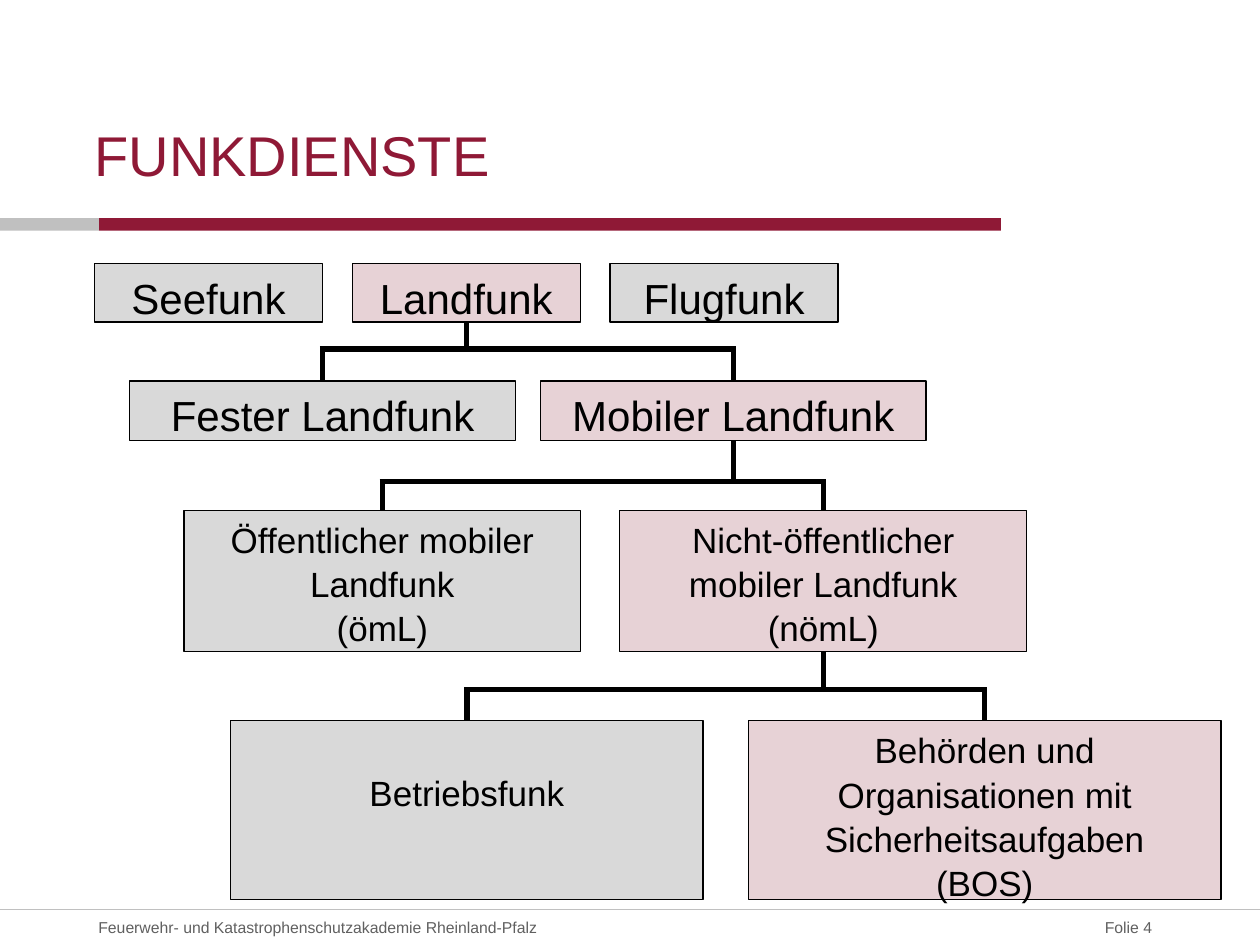
"""Build the slide on radio services as a four-level tree."""
import pptx
import pptx.util
import pptx.dml.color
import pptx.enum.shapes
import pptx.enum.text
from lxml import etree

Pt = pptx.util.Pt
RGB = pptx.dml.color.RGBColor.from_string
ALIGN = pptx.enum.text.PP_ALIGN
ANCHOR = pptx.enum.text.MSO_ANCHOR
RECTANGLE = pptx.enum.shapes.MSO_SHAPE.RECTANGLE
STRAIGHT = pptx.enum.shapes.MSO_CONNECTOR.STRAIGHT

THEME = {
    "font": "Arial", "title": 32, "large": 24, "medium": 20, "small": 9,
    "accent": "8F1936", "rule": "C0C0C0", "footer": "606060", "ink": "000000",
    "plain": "D9D9D9", "path": "E7D2D6",
}

TITLE = "FUNKDIENSTE"
ACADEMY = "Feuerwehr- und Katastrophenschutzakademie Rheinland-Pfalz"
PAGE = "Folie 4"

LEVELS = [
    {"top": 150.6, "height": 33.5, "left": 54, "gap": 17, "size": "large", "parent": 1,
     "services": [(["Seefunk"], 130.3), (["Landfunk"], 130.3), (["Flugfunk"], 130.3)]},
    {"top": 217.8, "height": 33.8, "left": 74.2, "gap": 14.4, "size": "large", "parent": 1,
     "bus": 199.5,
     "services": [(["Fester Landfunk"], 220.3), (["Mobiler Landfunk"], 220.3)]},
    {"top": 291.6, "height": 80.6, "left": 105.1, "gap": 22.3, "size": "medium", "parent": 1,
     "bus": 275.2,
     "services": [(["Öffentlicher mobiler Landfunk", "(ömL)"], 226.8),
                  (["Nicht-öffentlicher mobiler Landfunk", "(nömL)"], 232.6)]},
    {"top": 411.8, "height": 102.2, "left": 131.8, "gap": 25.9, "size": "medium", "parent": None,
     "bus": 393.9,
     "services": [(["Betriebsfunk"], 270),
                  (["Behörden und Organisationen mit Sicherheitsaufgaben", "(BOS)"], 270)]},
]
LINE_DROP = {"Betriebsfunk": 24}


def write(shape, lines, *, size, color="ink", align=ALIGN.LEFT, anchor=ANCHOR.TOP,
          insets=(0, 0, 0, 0), spacing=1.0):
    """Fill a shape with paragraphs in one format."""
    frame = shape.text_frame
    frame.word_wrap = True
    frame.vertical_anchor = anchor
    frame.margin_left, frame.margin_top, frame.margin_right, frame.margin_bottom = map(Pt, insets)
    for index, line in enumerate(lines):
        paragraph = frame.paragraphs[0] if index == 0 else frame.add_paragraph()
        paragraph.alignment = align
        paragraph.line_spacing = spacing
        run = paragraph.add_run()
        run.text = line
        run.font.name = THEME["font"]
        run.font.size = Pt(THEME[size])
        run.font.color.rgb = RGB(THEME[color])


def add_label(slide, text, box, **style):
    """Add a single-line text box."""
    write(slide.shapes.add_textbox(*map(Pt, box)), [text], **style)


def add_block(slide, box, fill, outline=None):
    """Add a filled rectangle."""
    block = slide.shapes.add_shape(RECTANGLE, *map(Pt, box))
    block.shadow.inherit = False
    block.fill.solid()
    block.fill.fore_color.rgb = RGB(THEME[fill])
    if outline:
        block.line.color.rgb = RGB(THEME[outline])
        block.line.width = Pt(0.75)
    else:
        block.line.fill.background()
    return block


def add_line(slide, start, end, color="ink", width=3):
    """Add a straight line without shadow."""
    line = slide.shapes.add_connector(STRAIGHT, *map(Pt, (*start, *end)))
    line.line.color.rgb = RGB(THEME[color])
    line.line.width = Pt(width)
    properties = line._element.spPr
    etree.SubElement(properties, pptx.oxml.ns.qn("a:effectLst"))
    return line


def add_level(slide, level):
    """Add one row of services and return each block with its centre."""
    row, left = [], level["left"]
    for index, (lines, width) in enumerate(level["services"]):
        on_path = index == 1
        block = add_block(slide, (left, level["top"], width, level["height"]),
                          "path" if on_path else "plain", "ink")
        drop = LINE_DROP.get(lines[0], 0)
        write(block, lines, size=level["size"], align=ALIGN.CENTER,
              insets=(7.2, 3.6 + drop, 7.2, 3.6), spacing=1.05)
        row.append((block, left + width / 2))
        left += width + level["gap"]
    return row


def join(slide, parent, parent_bottom, children, children_top, bus):
    """Link a parent block to its children through a horizontal bus."""
    block, center = parent
    add_line(slide, (center, parent_bottom), (center, bus)).begin_connect(block, 2)
    add_line(slide, (children[0][1] - 1.5, bus), (children[-1][1] + 1.5, bus))
    for child, middle in children:
        add_line(slide, (middle, children_top), (middle, bus)).begin_connect(child, 0)


def main():
    """Compose and save the slide."""
    deck = pptx.Presentation()
    deck.slide_width, deck.slide_height = Pt(720), Pt(540)
    slide = deck.slides.add_slide(deck.slide_layouts[6])

    add_block(slide, (56.5, 124.6, 515.5, 7.2), "accent")
    add_block(slide, (0, 124.6, 56.5, 7.2), "rule")
    add_line(slide, (0, 519.8), (720, 519.8), "rule", 0.75)
    footer = {"size": "small", "color": "footer", "anchor": ANCHOR.MIDDLE}
    add_label(slide, PAGE, (571.8, 519.8, 86.5, 20.2), align=ALIGN.RIGHT, **footer)
    add_label(slide, ACADEMY, (56.2, 519.8, 396.7, 20.2), **footer)
    add_label(slide, TITLE, (54, 34.6, 460, 72.7), size="title", color="accent",
              anchor=ANCHOR.BOTTOM)

    rows = [add_level(slide, level) for level in LEVELS]
    for depth in range(1, len(LEVELS)):
        upper, lower = LEVELS[depth - 1], LEVELS[depth]
        join(slide, rows[depth - 1][upper["parent"]], upper["top"] + upper["height"],
             rows[depth], lower["top"], lower["bus"])

    deck.save("out.pptx")


if __name__ == "__main__":
    main()
